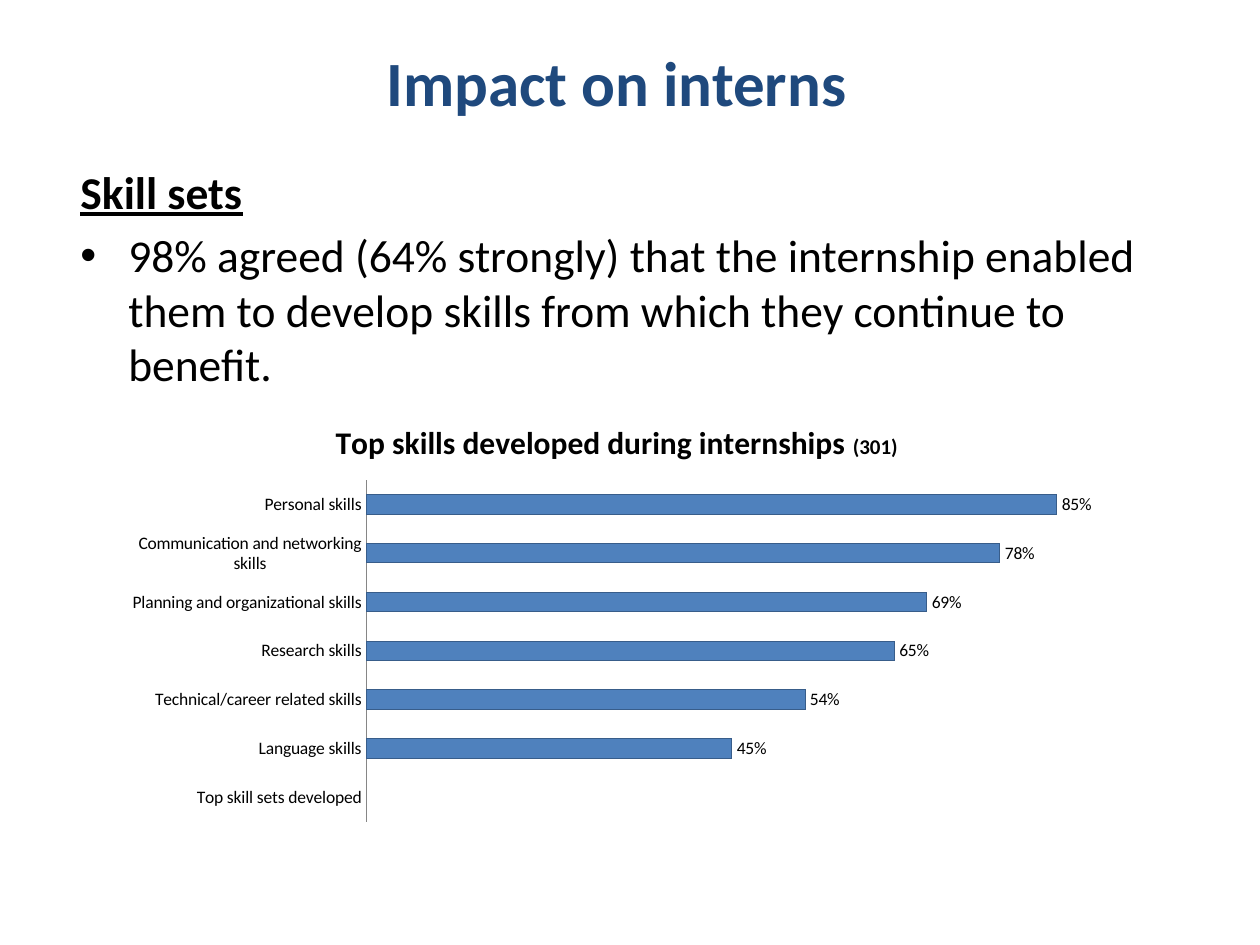
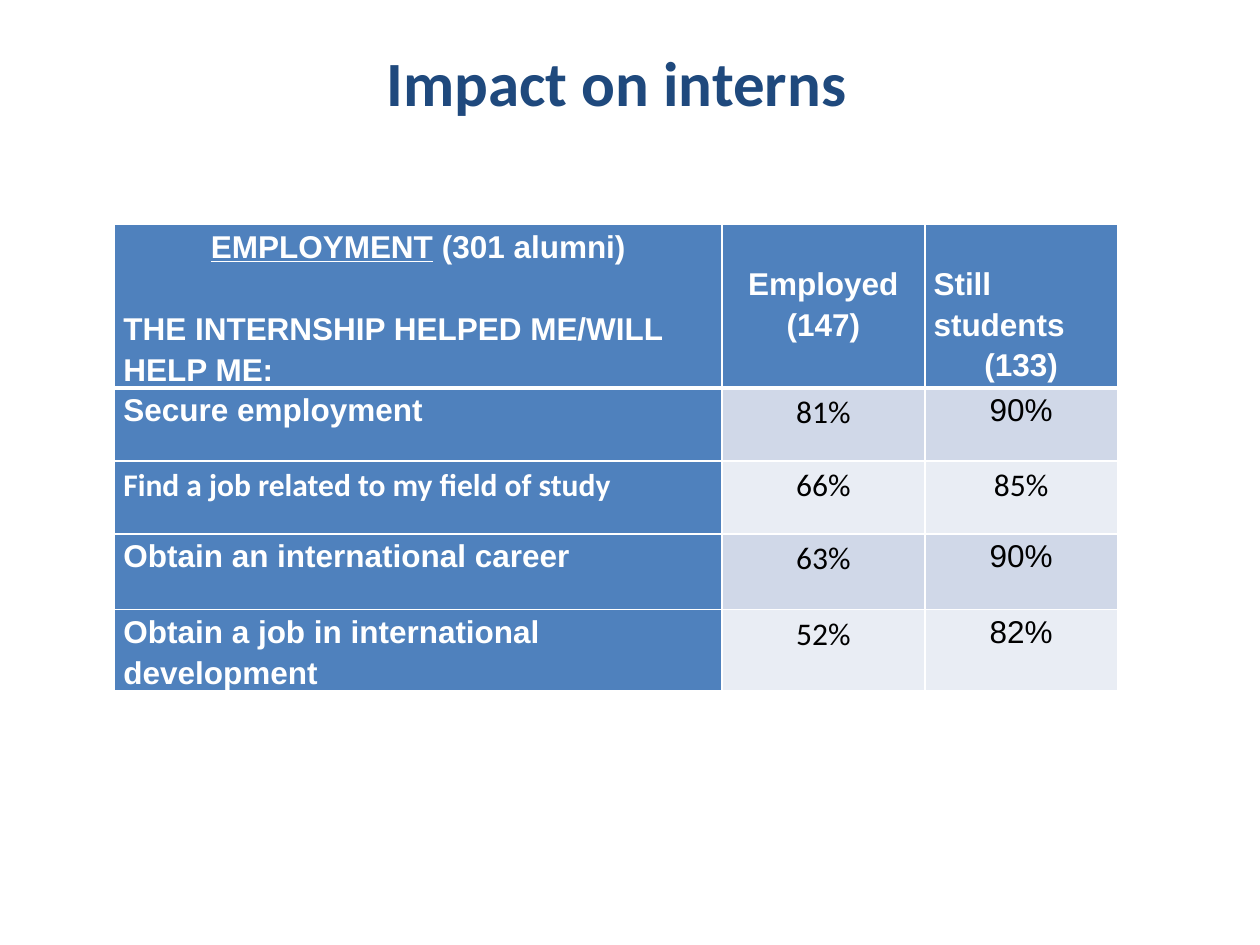
"""Build two slides on how internships affected the interns."""
import pptx
import pptx.chart.data
import pptx.dml.color
import pptx.enum.chart
import pptx.enum.text
import pptx.oxml
import pptx.oxml.ns
import pptx.util

Inches, Pt = pptx.util.Inches, pptx.util.Pt
RGBColor = pptx.dml.color.RGBColor
ALIGN = pptx.enum.text.PP_ALIGN
MID = pptx.enum.text.MSO_ANCHOR.MIDDLE

NAVY = RGBColor(0x1F, 0x49, 0x7D)
BLUE = RGBColor(0x4F, 0x81, 0xBD)
EDGE = RGBColor(0x38, 0x5D, 0x8A)
GREY = RGBColor(0x86, 0x86, 0x86)
BLACK = RGBColor(0, 0, 0)
WHITE = RGBColor(0xFF, 0xFF, 0xFF)
BANDS = RGBColor(0xD0, 0xD8, 0xE8), RGBColor(0xE9, 0xED, 0xF4)

HEAD = {"name": "Calibri", "size": Pt(36), "bold": True}
BODY = {"name": "Calibri", "size": Pt(26), "bold": False}
CELL = {"name": "Arial", "size": Pt(18), "bold": False}
NOTE = {"name": "Calibri", "size": Pt(10), "bold": False}
LEFT, MIDDLE = {"alignment": ALIGN.LEFT}, {"alignment": ALIGN.CENTER}


def apply(target, values):
    for key, value in values.items():
        setattr(target, key, value)


def add_xml(parent, text, index=None):
    """Insert an element written with the a: or c: prefix."""
    tag, rest = text.split(" ", 1)
    space = pptx.oxml.ns.nsdecls(tag[1])
    node = pptx.oxml.parse_xml(f"{tag} {space} {rest}")
    parent.insert(len(parent) if index is None else index, node)


class Deck:
    """Holds the shared style and the current slide."""

    def __init__(self):
        self.show = pptx.Presentation()
        self.show.slide_width = Inches(10)
        self.show.slide_height = Inches(7.5)
        self.slide = None

    def font(self, font, style, color):
        apply(font, style)
        font.color.rgb = color

    def run(self, para, text, style, color):
        run = para.add_run()
        run.text = text
        self.font(run.font, style, color)

    def page(self, title):
        self.slide = self.show.slides.add_slide(self.show.slide_layouts[5])
        shape = self.slide.shapes.title
        apply(shape, {"left": Inches(0.49), "top": Inches(0.34),
                      "width": Inches(8.92), "height": Inches(0.61)})
        shape.text_frame.vertical_anchor = MID
        para = shape.text_frame.paragraphs[0]
        para.alignment = ALIGN.CENTER
        self.run(para, title, HEAD, NAVY)

    def body(self, box, label, point):
        frame = self.slide.shapes.add_textbox(*map(Inches, box)).text_frame
        frame.word_wrap = True
        self.run(frame.paragraphs[0], label,
                 BODY | {"bold": True, "underline": True}, BLACK)
        para = frame.add_paragraph()
        props = para._p.get_or_add_pPr()
        props.set("marL", str(Inches(0.38)))
        props.set("indent", str(-Inches(0.38)))
        add_xml(props, '<a:buFont typeface="Arial"/>')
        add_xml(props, '<a:buChar char="•"/>')
        para.space_before = Pt(5)
        self.run(para, point, BODY, BLACK)

    def bars(self, box, title, count, values):
        data = pptx.chart.data.CategoryChartData(number_format="0%")
        data.categories = list(values)
        data.add_series("Series 1", list(values.values()))
        kind = pptx.enum.chart.XL_CHART_TYPE.BAR_CLUSTERED
        chart = self.slide.shapes.add_chart(kind, *map(Inches, box), data).chart
        self.font(chart.font, NOTE, BLACK)
        chart.has_legend = False
        para = chart.chart_title.text_frame.paragraphs[0]
        for text, size in (title, 18), (count, 12):
            self.run(para, text, NOTE | {"size": Pt(size), "bold": True}, BLACK)
        chart.chart_title.include_in_layout = False

        none = pptx.enum.chart.XL_TICK_MARK.NONE
        axis = chart.category_axis
        apply(axis, {"major_tick_mark": none, "minor_tick_mark": none})
        axis.format.line.color.rgb = GREY
        apply(chart.value_axis, {"visible": False, "minimum_scale": 0,
                                 "maximum_scale": 0.9,
                                 "has_major_gridlines": False})
        plot = chart.plots[0]
        apply(plot, {"gap_width": 150, "vary_by_categories": False,
                     "has_data_labels": True})
        apply(plot.data_labels, {
            "show_value": True, "number_format": "0%",
            "number_format_is_linked": False,
            "position": pptx.enum.chart.XL_LABEL_POSITION.OUTSIDE_END})
        self.font(plot.data_labels.font, NOTE, BLACK)
        look = plot.series[0].format
        look.fill.solid()
        look.fill.fore_color.rgb = BLUE
        look.line.color.rgb = EDGE

        area = chart._chartSpace.chart.plotArea
        for old in area.findall(pptx.oxml.ns.qn("c:layout")):
            area.remove(old)
        place = {"x": 0.25, "y": 0.18, "w": 0.73, "h": 0.8}
        spots = "".join(f'<c:{key} val="{val}"/>' for key, val in place.items())
        add_xml(area, '<c:layout ><c:manualLayout><c:layoutTarget val="inner"/>'
                '<c:xMode val="edge"/><c:yMode val="edge"/>'
                f'{spots}</c:manualLayout></c:layout>', 0)

    def cell(self, cell, fill, base=1, top=0):
        apply(cell, {"margin_left": Inches(0.07), "margin_right": Inches(0.07),
                     "margin_top": Inches(top), "margin_bottom": 0})
        cell.fill.solid()
        cell.fill.fore_color.rgb = fill
        props = cell._tc.get_or_add_tcPr()
        for index, side in enumerate("LRTB"):
            width = Pt(base if side == "B" else 1)
            add_xml(props, f'<a:ln{side} w="{width}"><a:solidFill>'
                    f'<a:srgbClr val="{WHITE}"/></a:solidFill></a:ln{side}>',
                    index)

    def line(self, cell, text, form, style=CELL, color=WHITE, first=True):
        frame = cell.text_frame
        para = frame.paragraphs[0] if first else frame.add_paragraph()
        apply(para, {"line_spacing": 1.15} | form)
        self.run(para, text, style, color)
        return para

    def table(self, box, widths, heights, heads, rows):
        table = self.slide.shapes.add_table(
            len(heights), len(widths), *map(Inches, box)).table
        apply(table, {"first_row": False, "horz_banding": False})
        for col, width in zip(table.columns, widths):
            col.width = Inches(width)
        for row, height in zip(table.rows, heights):
            row.height = Inches(height)
        bold = CELL | {"bold": True}
        for col, (top, lines) in enumerate(heads):
            cell = table.cell(0, col)
            self.cell(cell, BLUE, 3, top)
            for index, (parts, form) in enumerate(lines):
                para = self.line(cell, parts[0], form, bold, first=index == 0)
                for part in parts[1:]:
                    para.runs[0].font.underline = True
                    self.run(para, part, bold, WHITE)
        for index, (texts, fonts) in enumerate(rows):
            for col, (text, name) in enumerate(zip(texts, fonts)):
                cell = table.cell(index + 1, col)
                lead = col == 0
                self.cell(cell, BLUE if lead else BANDS[index % 2])
                self.line(cell, text, LEFT if lead else MIDDLE,
                          CELL | {"name": name, "bold": lead},
                          WHITE if lead else BLACK)


def main():
    deck = Deck()
    title = "Impact on interns "
    deck.page(title)
    deck.body((0.54, 1.25, 8.71, 5.65), "Skill sets",
              "98% agreed (64% strongly) that the internship enabled them to "
              "develop skills from which they continue to benefit.")
    deck.bars((0.92, 3.2, 7.95, 3.39),
              "Top skills developed during internships ", "(301)", {
                  "Top skill sets developed": None,
                  "Language skills": 0.45,
                  "Technical/career related skills": 0.54,
                  "Research skills": 0.65,
                  "Planning and organizational skills": 0.69,
                  "Communication and networking skills": 0.78,
                  "Personal skills": 0.85})

    deck.page(title)
    mixed = "Arial", "Calibri", "Arial"
    plain = ("Calibri",) * 3
    heads = [
        (0, [(("EMPLOYMENT", " (301 alumni)"), MIDDLE),
             (("THE INTERNSHIP HELPED ME/WILL HELP ME:",),
              LEFT | {"space_before": Pt(24)})]),
        (0.3, [(("Employed",), MIDDLE), (("(147)",), MIDDLE)]),
        (0.3, [(("Still students",), LEFT), (("(133)",), MIDDLE)])]
    rows = [
        (("Secure employment", "81%", "90%"), mixed),
        (("Find a job related to my field of study", "66%", "85%"), plain),
        (("Obtain an international career", "63%", "90%"), mixed),
        (("Obtain a job in international development", "52%", "82%"), mixed)]
    deck.table((0.91, 1.78, 7.95, 3.63), (4.82, 1.61, 1.53),
               (1.28, 0.58, 0.58, 0.6, 0.6), heads, rows)
    deck.show.save("out.pptx")


if __name__ == "__main__":
    main()
